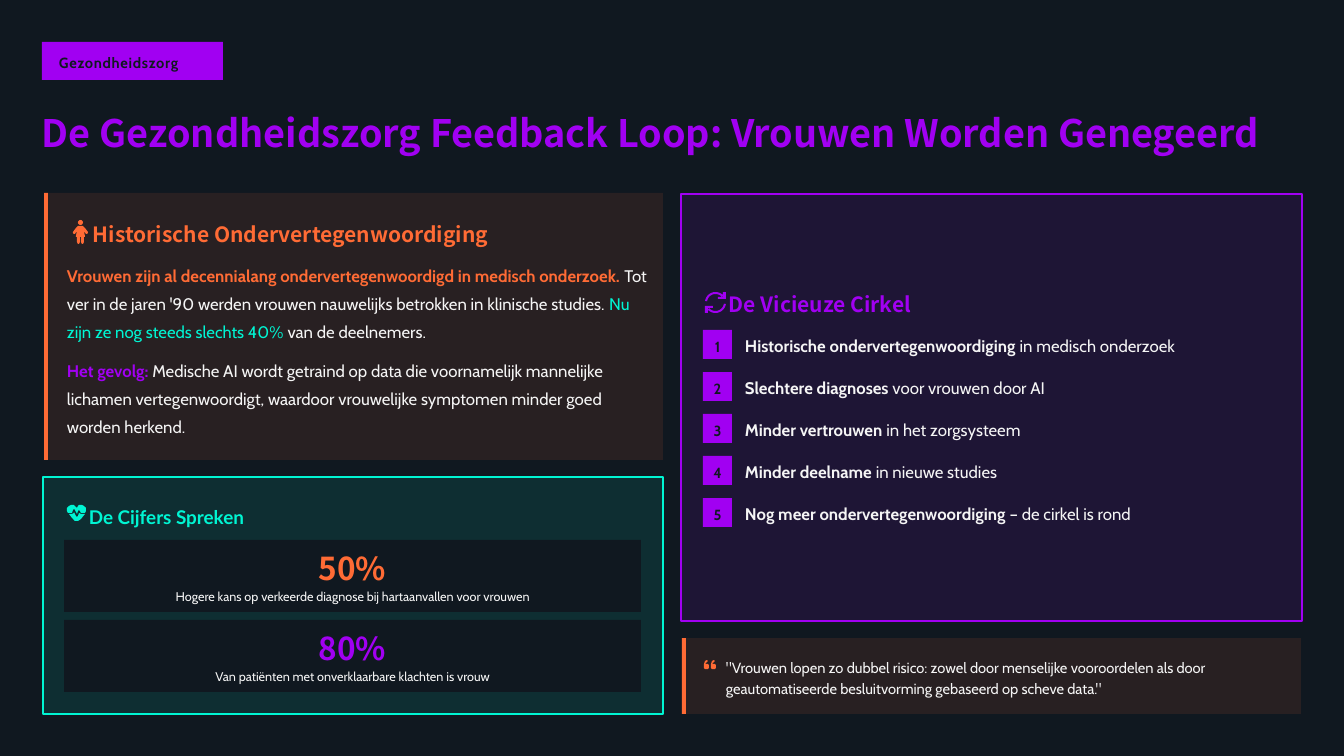
from dataclasses import dataclass
from math import cos, radians, sin

from lxml.etree import SubElement
from pptx import Presentation
from pptx.dml.color import RGBColor
from pptx.enum.shapes import MSO_SHAPE
from pptx.enum.text import MSO_ANCHOR, MSO_AUTO_SIZE, PP_ALIGN
from pptx.oxml.ns import qn
from pptx.util import Pt

PX = 914400 / 100.8


@dataclass(frozen=True)
class Theme:
    dark: str = "101820"
    purple: str = "A100F2"
    orange: str = "FF6B35"
    teal: str = "00F5D3"
    light: str = "F5F5F5"
    body_font: str = "Cabin"
    head_font: str = "Noto Sans CJK SC"
    stat_font: str = "Lato"
    title: float = 27
    figure: float = 22.5
    heading: float = 15
    subheading: float = 13.5
    body: float = 12
    small: float = 10.5
    caption: float = 9


THEME = Theme()

WOMAN = [[(4, 17), (3, 17), (3, 16), (4, 11), (2, 14), (1, 14), (0, 13), (0, 12), (3, 8), (5, 6),
          (10, 6), (12, 8), (15, 12), (15, 13), (14, 14), (13, 14), (11, 11), (12, 16), (12, 17),
          (11, 17), (11, 22), (10, 24), (9, 24), (8, 22), (8, 17), (7, 17), (7, 22), (6, 24),
          (5, 24), (4, 22)]]
HEART = [[(10, 3), (9, 2), (7, 0), (4, 0), (2, 1), (0, 3), (0, 6), (1, 8), (5, 8), (6, 5), (7, 4),
          (8, 5), (10, 9), (11, 6), (12, 5), (13, 6), (14, 8), (18, 8), (19, 6), (19, 3), (17, 1),
          (15, 0), (12, 0), (11, 1)],
         [(18, 9), (14, 9), (12, 8), (11, 11), (10, 12), (9, 11), (7, 7), (7, 8), (5, 9), (2, 9),
          (5, 13), (8, 16), (11, 16), (14, 14)]]
QUOTE_MARK = [(0, 4), (1, 1), (3, 0), (4, 1), (3, 2), (1, 4), (4, 4), (5, 5), (5, 8), (4, 9),
              (1, 9), (0, 8)]
QUOTES = [QUOTE_MARK, [(x + 7, y) for x, y in QUOTE_MARK]]


def cycle_outline():
    def arc(radius, angles):
        return [(10.5 + radius * cos(radians(a)), 10.5 + radius * sin(radians(a))) for a in angles]

    half = [arc(10.5, range(188, 319, 10)) + arc(8.5, range(318, 187, -10)),
            [(13, 5), (18, 5), (18, 0), (21, 0), (21, 7), (13, 7)]]
    return half + [[(21 - x, 21 - y) for x, y in part] for part in half]


def emu(*lengths):
    return [round(length * PX) for length in lengths]


def paint(shape, color, alpha=None, outline=None):
    shape.shadow.inherit = False
    shape.fill.solid()
    shape.fill.fore_color.rgb = RGBColor.from_string(color)
    if alpha:
        tint = shape.fill._xPr.find(qn("a:solidFill"))[0]
        SubElement(tint, qn("a:alpha")).set("val", str(alpha * 1000))
    if outline:
        shape.line.color.rgb = RGBColor.from_string(outline)
        shape.line.width = Pt(1.25)
    else:
        shape.line.fill.background()
    return shape


def block(page, box, color, alpha=None, outline=None, kind=MSO_SHAPE.RECTANGLE):
    return paint(page.shapes.add_shape(kind, *emu(*box)), color, alpha, outline)


def icon(page, left, top, outlines, color):
    fine = [[(x * 10, y * 10) for x, y in outline] for outline in outlines]
    builder = page.shapes.build_freeform(*fine[0][0], scale=PX / 10)
    for index, outline in enumerate(fine):
        if index:
            builder.move_to(*outline[0])
        builder.add_line_segments(outline[1:], close=True)
    paint(builder.convert_to_shape(*emu(left, top)), color)


def write(shape, spans, size, font=THEME.body_font, spacing=1.0, align=PP_ALIGN.LEFT,
          insets=(0, 0, 0, 0)):
    frame = shape.text_frame
    frame.word_wrap = True
    frame.auto_size = MSO_AUTO_SIZE.NONE
    frame.vertical_anchor = MSO_ANCHOR.MIDDLE
    frame.margin_left, frame.margin_top, frame.margin_right, frame.margin_bottom = emu(*insets)
    para = frame.paragraphs[0]
    para.alignment = align
    para.line_spacing = spacing
    for text, color, bold in spans:
        span = para.add_run()
        span.text = text
        span.font.name = font
        span.font.size = Pt(size)
        span.font.bold = bold
        span.font.color.rgb = RGBColor.from_string(color)


def label(page, box, spans, size, **style):
    write(page.shapes.add_textbox(*emu(*box)), spans, size, **style)


def accent_panel(page, box):
    left, top, _, height = box
    block(page, box, THEME.orange, alpha=10)
    block(page, (left, top, 4, height), THEME.orange)


def header(page, box):
    left, top, width, _ = box
    badge = block(page, (left, top, 181, 38), THEME.purple)
    write(badge, [("Gezondheidszorg", THEME.dark, True)], THEME.small, spacing=1.2,
          insets=(17, 8, 17, 8))
    badge.text_frame.paragraphs[0].runs[0].font._element.set("spc", "50")
    title = page.shapes.title
    title.left, title.top, title.width, title.height = emu(left, top + 51, width, 84)
    write(title, [("De Gezondheidszorg Feedback Loop: Vrouwen Worden Genegeerd", THEME.purple, True)],
          THEME.title, font=THEME.head_font, spacing=0.9)


def history(page, box):
    left, top, _, _ = box
    accent_panel(page, box)
    block(page, (left + 34, top + 27, 5, 5), THEME.orange, kind=MSO_SHAPE.OVAL)
    icon(page, left + 29, top + 27, WOMAN, THEME.orange)
    label(page, (left + 49, top + 24, 559, 29),
          [("Historische Ondervertegenwoordiging", THEME.orange, True)],
          THEME.heading, font=THEME.head_font, spacing=1.2)
    paragraphs = [
        [("Vrouwen zijn al decennialang ondervertegenwoordigd in medisch onderzoek.",
          THEME.orange, True),
         (" Tot ver in de jaren '90 werden vrouwen nauwelijks betrokken in klinische studies. ",
          THEME.light, False),
         ("Nu zijn ze nog steeds slechts 40%", THEME.teal, False),
         (" van de deelnemers.", THEME.light, False)],
        [("Het gevolg:", THEME.purple, True),
         (" Medische AI wordt getraind op data die voornamelijk mannelijke lichamen "
          "vertegenwoordigt, waardoor vrouwelijke symptomen minder goed worden herkend.",
          THEME.light, False)]]
    for index, spans in enumerate(paragraphs):
        label(page, (left + 23, top + 66 + 95 * index, 584, 82), spans, THEME.body, spacing=1.4)


def statistics(page, box):
    left, top, _, _ = box
    block(page, box, THEME.teal, alpha=10, outline=THEME.teal)
    icon(page, left + 24, top + 28, HEART, THEME.teal)
    label(page, (left + 46, top + 22, 561, 29), [("De Cijfers Spreken", THEME.teal, True)],
          THEME.subheading, font=THEME.stat_font, spacing=1.3)
    figures = [
        ("50%", THEME.orange, "Hogere kans op verkeerde diagnose bij hartaanvallen voor vrouwen"),
        ("80%", THEME.purple, "Van patiënten met onverklaarbare klachten is vrouw")]
    for index, (figure, color, caption) in enumerate(figures):
        x, y = left + 21, top + 63 + 80 * index
        block(page, (x, y, 577, 72), THEME.dark)
        label(page, (x, y + 9, 577, 38), [(figure, color, True)], THEME.figure,
              font=THEME.head_font, align=PP_ALIGN.CENTER)
        label(page, (x + 5, y + 47, 567, 17), [(caption, THEME.light, False)], THEME.caption,
              spacing=1.1, align=PP_ALIGN.CENTER)


def vicious_circle(page, box):
    left, top, _, _ = box
    block(page, box, THEME.purple, alpha=10, outline=THEME.purple)
    icon(page, left + 24, top + 98, cycle_outline(), THEME.purple)
    label(page, (left + 48, top + 93, 561, 29), [("De Vicieuze Cirkel", THEME.purple, True)],
          THEME.heading, font=THEME.head_font, spacing=1.2)
    steps = [("Historische ondervertegenwoordiging", " in medisch onderzoek"),
             ("Slechtere diagnoses", " voor vrouwen door AI"),
             ("Minder vertrouwen", " in het zorgsysteem"),
             ("Minder deelname", " in nieuwe studies"),
             ("Nog meer ondervertegenwoordiging", " – de cirkel is rond")]
    for index, (strong, rest) in enumerate(steps):
        y = top + 136 + 42 * index
        number = block(page, (left + 22, y, 29, 29), THEME.purple)
        write(number, [(str(index + 1), THEME.dark, True)], THEME.small, spacing=1.2,
              align=PP_ALIGN.CENTER)
        label(page, (left + 64, y, 540, 25),
              [(strong, THEME.light, True), (rest, THEME.light, False)], THEME.body, spacing=1.3)


def quotation(page, box):
    left, top, _, _ = box
    accent_panel(page, box)
    icon(page, left + 22, top + 22, QUOTES, THEME.orange)
    label(page, (left + 44, top + 17, 566, 42),
          [('"Vrouwen lopen zo dubbel risico: zowel door menselijke vooroordelen als door '
            'geautomatiseerde besluitvorming gebaseerd op scheve data."', THEME.light, False)],
          THEME.small, spacing=1.2)


def main():
    deck = Presentation()
    deck.slide_width, deck.slide_height = emu(1344, 756)
    page = deck.slides.add_slide(deck.slide_layouts[5])
    page.background.fill.solid()
    page.background.fill.fore_color.rgb = RGBColor.from_string(THEME.dark)
    header(page, (42, 42, 1279, 135))
    history(page, (44, 193, 619, 267))
    statistics(page, (43, 477, 620, 237))
    vicious_circle(page, (681, 194, 621, 427))
    quotation(page, (682, 638, 619, 76))
    deck.save("out.pptx")


if __name__ == "__main__":
    main()
